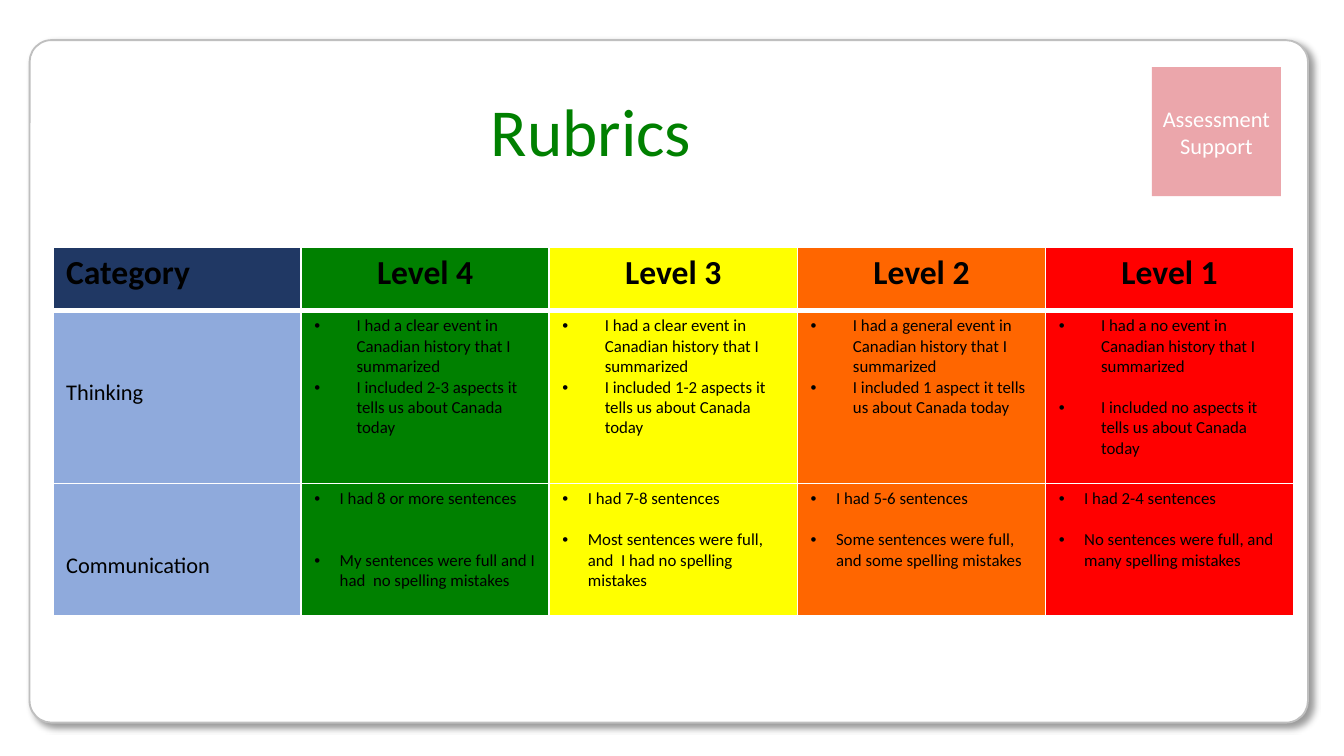
"""Build a rubric slide with a four-level assessment table."""
from dataclasses import dataclass

from lxml.etree import SubElement
from pptx import Presentation
from pptx.dml.color import RGBColor
from pptx.enum.shapes import MSO_SHAPE
from pptx.enum.text import MSO_ANCHOR, PP_ALIGN
from pptx.oxml import parse_xml
from pptx.oxml.ns import nsdecls, qn
from pptx.util import Cm, Pt


@dataclass(frozen=True)
class Theme:
    font: str = "Calibri"
    white: str = "FFFFFF"
    black: str = "000000"
    frame: str = "BFBFBF"
    badge: str = "EBA6AB"
    header: str = "203864"
    category: str = "8FAADC"
    green: str = "008000"
    yellow: str = "FFFF00"
    orange: str = "FF6600"
    red: str = "FF0000"
    title_size: int = 36
    header_size: int = 18
    label_size: int = 12
    criterion_size: int = 9


theme = Theme()


def paint(fill, color):
    fill.solid()
    fill.fore_color.rgb = RGBColor.from_string(color)


def add_run(paragraph, text, size, color=theme.black, bold=False):
    run = paragraph.add_run()
    run.text = text
    run.font.name = theme.font
    run.font.size = Pt(size)
    run.font.bold = bold
    run.font.color.rgb = RGBColor.from_string(color)


prs = Presentation()
prs.slide_width, prs.slide_height = Cm(25.4), Cm(14.29)
slide = prs.slides.add_slide(prs.slide_layouts[6])

frame = slide.shapes.add_shape(MSO_SHAPE.ROUNDED_RECTANGLE, Cm(0.56), Cm(0.76), Cm(24.16), Cm(12.9))
frame.adjustments[0] = 0.032
paint(frame.fill, theme.white)
paint(frame.line.fill, theme.frame)
frame.line.width = Pt(1)
frame.shadow.inherit = False
frame._element.spPr.find(qn("a:effectLst")).append(parse_xml(
    f'<a:outerShdw {nsdecls("a")} blurRad="{Pt(4)}" dist="{Pt(3)}" dir="2700000" algn="tl" rotWithShape="0">'
    f'<a:srgbClr val="{theme.black}"><a:alpha val="40000"/></a:srgbClr></a:outerShdw>'))

badge = slide.shapes.add_shape(MSO_SHAPE.RECTANGLE, Cm(21.77), Cm(1.27), Cm(2.44), Cm(2.44))
paint(badge.fill, theme.badge)
badge.line.fill.background()
badge.shadow.inherit = False
badge_text = badge.text_frame
badge_text.word_wrap = True
badge_text.vertical_anchor = MSO_ANCHOR.MIDDLE
badge_text.margin_left = badge_text.margin_right = Cm(0.18)
badge_text.margin_top = badge_text.margin_bottom = Cm(0.1)
badge_text.paragraphs[0].alignment = PP_ALIGN.CENTER
add_run(badge_text.paragraphs[0], "Assessment Support", theme.label_size, theme.white)

title = slide.shapes.add_textbox(Cm(0.64), Cm(1.57), Cm(21.06), Cm(1.8)).text_frame
title.word_wrap = True
title.paragraphs[0].alignment = PP_ALIGN.CENTER
add_run(title.paragraphs[0], "Rubrics", theme.title_size, theme.green)

headings = ["Category", "Level 4", "Level 3", "Level 2", "Level 1"]
level_colors = [theme.green, theme.yellow, theme.orange, theme.red]
criteria = [
    ("Thinking", 0.8, [
        ("I had a clear event in Canadian history that I summarized",
         "I included 2-3 aspects it tells us about Canada today", 0),
        ("I had a clear event in Canadian history that I summarized",
         "I included 1-2 aspects it tells us about Canada today", 0),
        ("I had a general event in Canadian history that I summarized",
         "I included 1 aspect it tells us about Canada today", 0),
        ("I had a no event in Canadian history that I summarized",
         "I included no aspects it tells us about Canada today", 11),
    ]),
    ("Communication", 0.48, [
        ("I had 8 or more sentences", "My sentences were full and I had  no spelling mistakes", 22),
        ("I had 7-8 sentences", "Most sentences were full, and  I had no spelling mistakes", 11),
        ("I had 5-6 sentences", "Some sentences were full, and some spelling mistakes", 11),
        ("I had 2-4 sentences", "No sentences were full, and many spelling mistakes", 11),
    ]),
]
row_heights = [1.19, 3.27, 2.5]

rubric = slide.shapes.add_table(3, 5, Cm(1), Cm(4.68), Cm(23.45), Cm(sum(row_heights))).table
rubric.horz_banding = False
for column in rubric.columns:
    column.width = Cm(4.69)
for row, height in zip(rubric.rows, row_heights):
    row.height = Cm(height)

for row_index, row in enumerate(rubric.rows):
    for column_index, cell in enumerate(row.cells):
        cell.margin_left = cell.margin_right = Cm(0.25)
        cell.margin_top = cell.margin_bottom = Cm(0.1)
        borders = {"lnL": 1, "lnR": 1, "lnT": 3 if row_index == 1 else 1, "lnB": 3 if row_index == 0 else 1}
        for side, width in borders.items():
            border = SubElement(cell._tc.get_or_add_tcPr(), qn(f"a:{side}"), w=str(Pt(width)))
            SubElement(SubElement(border, qn("a:solidFill")), qn("a:srgbClr"), val=theme.white)
        if column_index:
            paint(cell.fill, level_colors[column_index - 1])
        else:
            paint(cell.fill, theme.category if row_index else theme.header)

for column_index, heading in enumerate(headings):
    paragraph = rubric.cell(0, column_index).text_frame.paragraphs[0]
    paragraph.alignment = PP_ALIGN.CENTER if column_index else PP_ALIGN.LEFT
    add_run(paragraph, heading, theme.header_size, bold=True)

for row_index, (category, indent, levels) in enumerate(criteria, start=1):
    category_cell = rubric.cell(row_index, 0)
    category_cell.margin_top = Cm(1.3)
    add_run(category_cell.text_frame.paragraphs[0], category, theme.label_size)
    for column_index, (first, second, gap) in enumerate(levels, start=1):
        descriptors = rubric.cell(row_index, column_index).text_frame
        for paragraph, text in ((descriptors.paragraphs[0], first), (descriptors.add_paragraph(), second)):
            properties = paragraph._p.get_or_add_pPr()
            properties.set("marL", str(Cm(indent)))
            properties.set("indent", str(-Cm(indent)))
            SubElement(properties, qn("a:buFont"), typeface="Arial")
            SubElement(properties, qn("a:buChar"), char="•")
            add_run(paragraph, text, theme.criterion_size)
        if gap:
            descriptors.paragraphs[1].space_before = Pt(gap)

prs.save("out.pptx")
